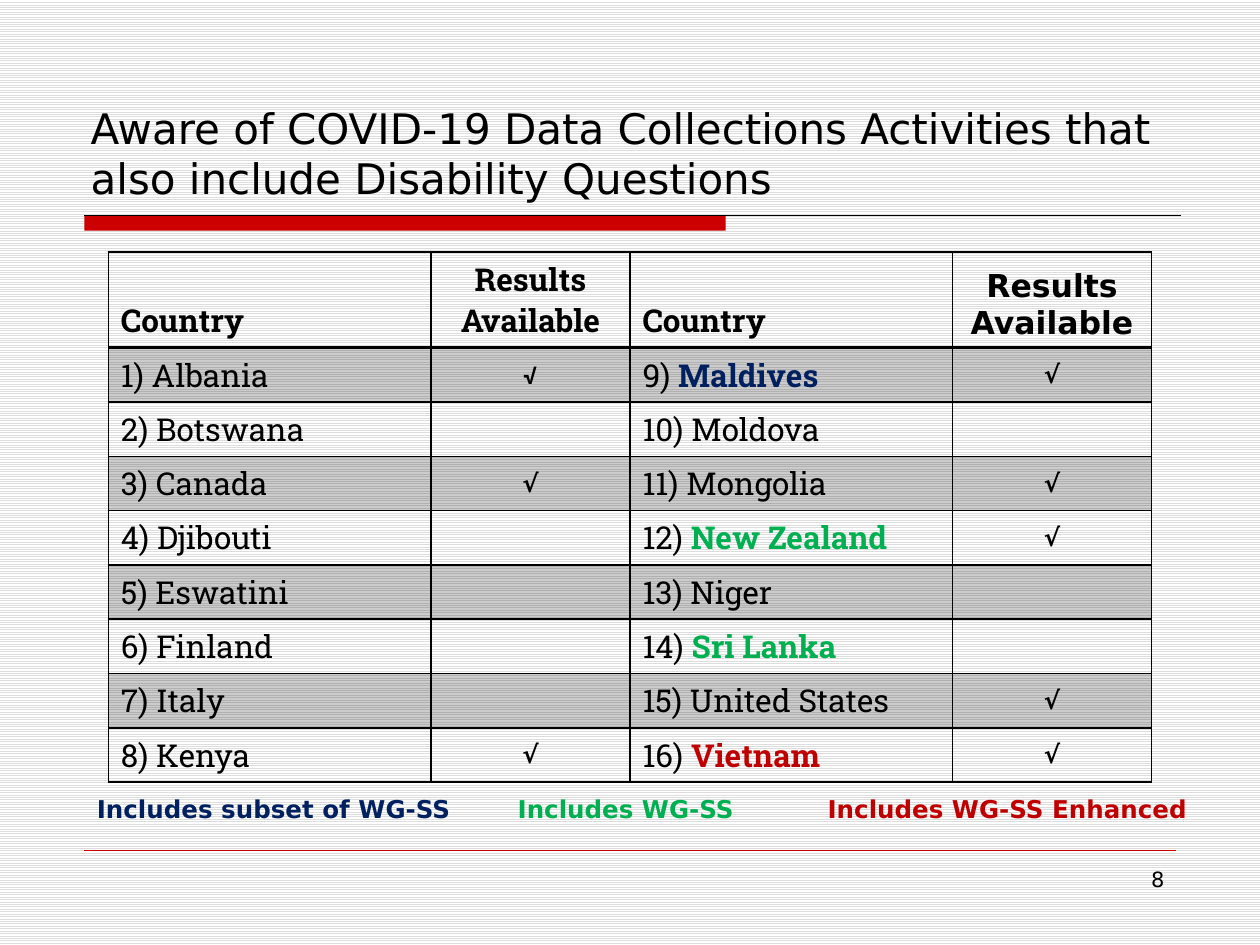
from dataclasses import dataclass
from typing import Optional

from lxml.etree import SubElement
from pptx import Presentation
from pptx.dml.color import RGBColor
from pptx.enum.dml import MSO_PATTERN
from pptx.enum.shapes import MSO_CONNECTOR, MSO_SHAPE
from pptx.enum.text import MSO_ANCHOR, MSO_AUTO_SIZE, PP_ALIGN
from pptx.oxml.ns import qn
from pptx.util import Inches, Pt

BLACK = RGBColor(0x00, 0x00, 0x00)
WHITE = RGBColor(0xFF, 0xFF, 0xFF)
STRIPE = RGBColor(0xDD, 0xDD, 0xDD)
RED = RGBColor(0xCC, 0x00, 0x00)
NAVY = RGBColor(0x00, 0x20, 0x60)
GREEN = RGBColor(0x00, 0xB0, 0x50)
CRIMSON = RGBColor(0xC0, 0x00, 0x00)
SANS = "DejaVu Sans"
SLAB = "Roboto Slab"


@dataclass
class Country:
    name: str
    available: bool = False
    color: Optional[RGBColor] = None
    tick_font: str = SANS


@dataclass
class Label:
    text: str
    left: float
    top: float
    width: float
    height: float
    color: RGBColor
    size: int = 14
    bold: bool = True
    wrap: bool = False
    align: PP_ALIGN = PP_ALIGN.LEFT


COUNTRIES = [
    Country("Albania", True, tick_font=SLAB),
    Country("Botswana"),
    Country("Canada", True),
    Country("Djibouti"),
    Country("Eswatini"),
    Country("Finland"),
    Country("Italy"),
    Country("Kenya", True),
    Country("Maldives", True, NAVY),
    Country("Moldova"),
    Country("Mongolia", True),
    Country("New Zealand", True, GREEN),
    Country("Niger"),
    Country("Sri Lanka", color=GREEN),
    Country("United States", True),
    Country("Vietnam", True, CRIMSON),
]
LABELS = [
    Label("8", 7.17, 6.83, 2.17, 0.52, BLACK, 12, False, True, PP_ALIGN.RIGHT),
    Label("Includes WG-SS", 4.01, 6.25, 1.98, 0.34, GREEN),
    Label("Includes subset of WG-SS", 0.67, 6.25, 3.05, 0.34, NAVY),
    Label("Includes WG-SS Enhanced", 6.47, 6.25, 3.11, 0.34, CRIMSON),
]
HEADERS = [("Country", SLAB), ("Results Available", SLAB),
           ("Country", SLAB), ("Results Available", SANS)]
COLUMN_WIDTHS = [2.56, 1.58, 2.56, 1.58]
HEADER_HEIGHT, ROW_HEIGHT = 0.74, 0.41
ROWS_PER_HALF = len(COUNTRIES) // 2


def set_font(font, size: int, name: str, color: RGBColor, bold: bool = False) -> None:
    font.size = Pt(size)
    font.name = name
    font.bold = bold
    font.color.rgb = color


def add_rule(s, x1: float, x2: float, y: float, color: RGBColor, width: float) -> None:
    line = s.shapes.add_connector(
        MSO_CONNECTOR.STRAIGHT, Inches(x1), Inches(y), Inches(x2), Inches(y))
    line.line.color.rgb = color
    line.line.width = Pt(width)
    SubElement(line._element.spPr, qn("a:effectLst"))


def add_label(s, label: Label) -> None:
    box = s.shapes.add_textbox(Inches(label.left), Inches(label.top),
                               Inches(label.width), Inches(label.height))
    tf = box.text_frame
    tf.word_wrap = label.wrap
    if not label.wrap:
        tf.auto_size = MSO_AUTO_SIZE.SHAPE_TO_FIT_TEXT
    p = tf.paragraphs[0]
    p.text = label.text
    p.alignment = label.align
    set_font(p.font, label.size, SANS, label.color, label.bold)


def style_cell(cell, row: int) -> None:
    tc_pr = cell._tc.get_or_add_tcPr()
    widths = {"a:lnL": 1, "a:lnR": 1,
              "a:lnT": 2 if row == 1 else 1, "a:lnB": 2 if row == 0 else 1}
    for tag, width in widths.items():
        ln = SubElement(tc_pr, qn(tag), w=str(Pt(width)))
        fill = SubElement(ln, qn("a:solidFill"))
        SubElement(fill, qn("a:srgbClr"), val=str(BLACK))
    if row % 2:
        cell.fill.solid()
        cell.fill.fore_color.rgb = BLACK
        color = tc_pr.find(qn("a:solidFill")).find(qn("a:srgbClr"))
        SubElement(color, qn("a:alpha"), val="20000")
    else:
        cell.fill.background()


def fill_country(name_cell, tick_cell, number: int, country: Country) -> None:
    p = name_cell.text_frame.paragraphs[0]
    set_font(p.font, 18, SLAB, BLACK)
    if country.color is None:
        p.text = f"{number}) {country.name}"
    else:
        p.add_run().text = f"{number}) "
        r = p.add_run()
        r.text = country.name
        r.font.bold = True
        r.font.color.rgb = country.color
    if country.available:
        tick_cell.vertical_anchor = MSO_ANCHOR.MIDDLE
        p = tick_cell.text_frame.paragraphs[0]
        p.text = "√"
        p.alignment = PP_ALIGN.CENTER
        set_font(p.font, 14, country.tick_font, BLACK, True)


def add_country_table(s) -> None:
    height = HEADER_HEIGHT + ROWS_PER_HALF * ROW_HEIGHT
    table = s.shapes.add_table(
        ROWS_PER_HALF + 1, len(HEADERS), Inches(0.86), Inches(2),
        Inches(sum(COLUMN_WIDTHS)), Inches(height)).table
    table.first_row = False
    table.horz_banding = False
    for column, width in zip(table.columns, COLUMN_WIDTHS):
        column.width = Inches(width)
    for i, row in enumerate(table.rows):
        row.height = Inches(ROW_HEIGHT if i else HEADER_HEIGHT)
        for cell in row.cells:
            style_cell(cell, i)
    for i, (text, font) in enumerate(HEADERS):
        cell = table.cell(0, i)
        cell.vertical_anchor = MSO_ANCHOR.BOTTOM
        p = cell.text_frame.paragraphs[0]
        p.text = text
        p.alignment = PP_ALIGN.CENTER if i % 2 else PP_ALIGN.LEFT
        set_font(p.font, 18, font, BLACK, True)
    for i, country in enumerate(COUNTRIES):
        half, row = divmod(i, ROWS_PER_HALF)
        fill_country(table.cell(row + 1, 2 * half),
                     table.cell(row + 1, 2 * half + 1), i + 1, country)


def main() -> None:
    prs = Presentation()
    prs.slide_width, prs.slide_height = Inches(10), Inches(7.5)
    s = prs.slides.add_slide(prs.slide_layouts[5])
    background = s.background.fill
    background.patterned()
    background.pattern = MSO_PATTERN.LIGHT_HORIZONTAL
    background.fore_color.rgb = STRIPE
    background.back_color.rgb = WHITE

    bar = s.shapes.add_shape(MSO_SHAPE.RECTANGLE, Inches(0.67), Inches(1.71),
                             Inches(5.09), Inches(0.12))
    bar.shadow.inherit = False
    bar.fill.solid()
    bar.fill.fore_color.rgb = RED
    bar.line.fill.background()
    add_rule(s, 0.67, 9.37, 1.71, BLACK, 0.75)
    add_rule(s, 0.67, 9.33, 6.75, RED, 0.25)

    title = s.shapes.title
    title.left, title.top = Inches(0.62), Inches(0.33)
    title.width, title.height = Inches(8.75), Inches(1.33)
    tf = title.text_frame
    tf.vertical_anchor = MSO_ANCHOR.BOTTOM
    tf.auto_size = MSO_AUTO_SIZE.NONE
    p = tf.paragraphs[0]
    p.text = "Aware of COVID-19 Data Collections Activities that also include Disability Questions"
    p.alignment = PP_ALIGN.LEFT
    set_font(p.font, 24, SANS, BLACK)

    add_country_table(s)
    for label in LABELS:
        add_label(s, label)
    prs.save("out.pptx")


if __name__ == "__main__":
    main()
